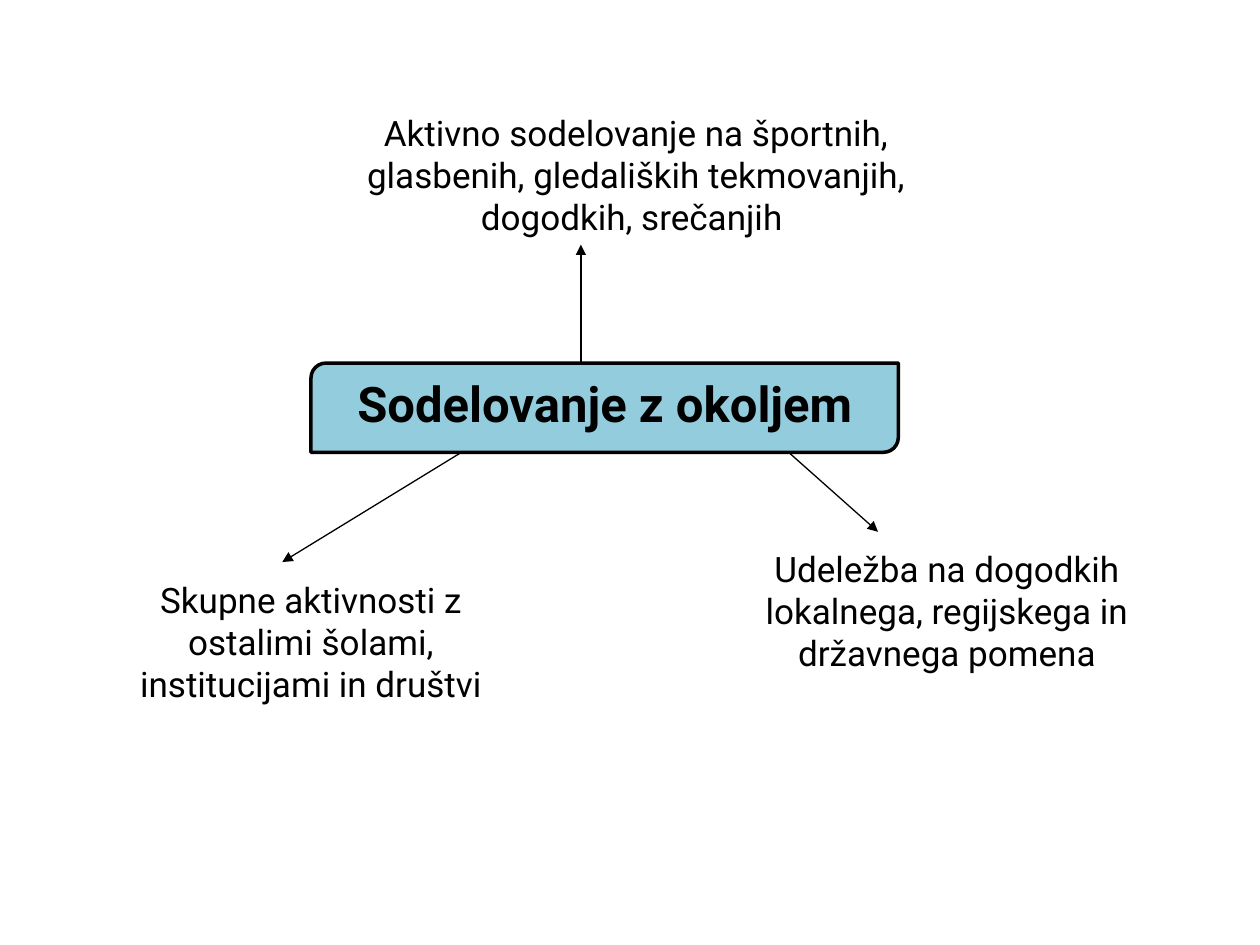
import dataclasses

import lxml.etree
import pptx
import pptx.dml.color
import pptx.enum.shapes
import pptx.enum.text
import pptx.oxml.ns
import pptx.util

Cm = pptx.util.Cm
Pt = pptx.util.Pt


@dataclasses.dataclass(frozen=True)
class Theme:
    font: str = "Roboto"
    ink: str = "000000"
    topic_fill: str = "93CDDD"
    topic_size: int = 28
    branch_size: int = 20
    topic_line: float = 2
    arrow_line: float = 0.75


class MindMap:
    """Holds the theme and the current slide."""

    def __init__(self, slide, theme):
        self.slide = slide
        self.theme = theme

    def color(self, value):
        return pptx.dml.color.RGBColor.from_string(value)

    def add_text(self, shape, text, size, bold=False):
        frame = shape.text_frame
        frame.word_wrap = True
        frame.vertical_anchor = pptx.enum.text.MSO_ANCHOR.TOP
        paragraph = frame.paragraphs[0]
        paragraph.alignment = pptx.enum.text.PP_ALIGN.CENTER
        run = paragraph.add_run()
        run.text = text
        run.font.name = self.theme.font
        run.font.size = Pt(size)
        run.font.bold = bold
        run.font.color.rgb = self.color(self.theme.ink)

    def topic(self, text, left, top, width, height):
        shape = self.slide.shapes.add_shape(
            pptx.enum.shapes.MSO_SHAPE.ROUND_2_DIAG_RECTANGLE,
            Cm(left), Cm(top), Cm(width), Cm(height))
        shape.shadow.inherit = False
        shape.fill.solid()
        shape.fill.fore_color.rgb = self.color(self.theme.topic_fill)
        shape.line.color.rgb = self.color(self.theme.ink)
        shape.line.width = Pt(self.theme.topic_line)
        self.add_text(shape, text, self.theme.topic_size, bold=True)

    def label(self, text, left, top, width, height):
        shape = self.slide.shapes.add_textbox(
            Cm(left), Cm(top), Cm(width), Cm(height))
        self.add_text(shape, text, self.theme.branch_size)
        shape.text_frame.auto_size = pptx.enum.text.MSO_AUTO_SIZE.SHAPE_TO_FIT_TEXT

    def arrow(self, start, end):
        connector = self.slide.shapes.add_connector(
            pptx.enum.shapes.MSO_CONNECTOR.STRAIGHT,
            *(Cm(value) for value in (*start, *end)))
        connector.line.color.rgb = self.color(self.theme.ink)
        connector.line.width = Pt(self.theme.arrow_line)
        # Arrowhead at the end, no shadow
        qn = pptx.oxml.ns.qn
        properties = connector._element.spPr
        line = properties.find(qn("a:ln"))
        lxml.etree.SubElement(line, qn("a:tailEnd"), type="triangle")
        lxml.etree.SubElement(properties, qn("a:effectLst"))


def main():
    presentation = pptx.Presentation()
    presentation.slide_width = Cm(25.4)
    presentation.slide_height = Cm(19.05)
    slide = presentation.slides.add_slide(presentation.slide_layouts[6])
    mind_map = MindMap(slide, Theme())

    # Central topic
    topic_top, topic_height = 7.32, 1.8
    topic_bottom = topic_top + topic_height
    mind_map.topic("Sodelovanje z okoljem", 6.27, topic_top, 11.84, topic_height)

    # Branches: text, label left, top and width, arrow start and end
    label_height = 2.82
    branches = [
        ("Skupne aktivnosti z ostalimi šolami, institucijami in društvi",
         (2.31, 11.53, 7.92), (9.3, topic_bottom), (5.69, 11.33)),
        ("Udeležba na dogodkih lokalnega, regijskega in državnega pomena",
         (15.09, 10.92, 8), (15.9, topic_bottom), (17.7, 10.72)),
        ("Aktivno sodelovanje na športnih, glasbenih, gledaliških tekmovanjih, "
         "dogodkih, srečanjih ",
         (5.89, 2.13, 13.87), (11.71, topic_top), (11.71, 4.93)),
    ]
    for text, place, start, end in branches:
        mind_map.arrow(start, end)
        mind_map.label(text, *place, label_height)

    presentation.save("out.pptx")


if __name__ == "__main__":
    main()
